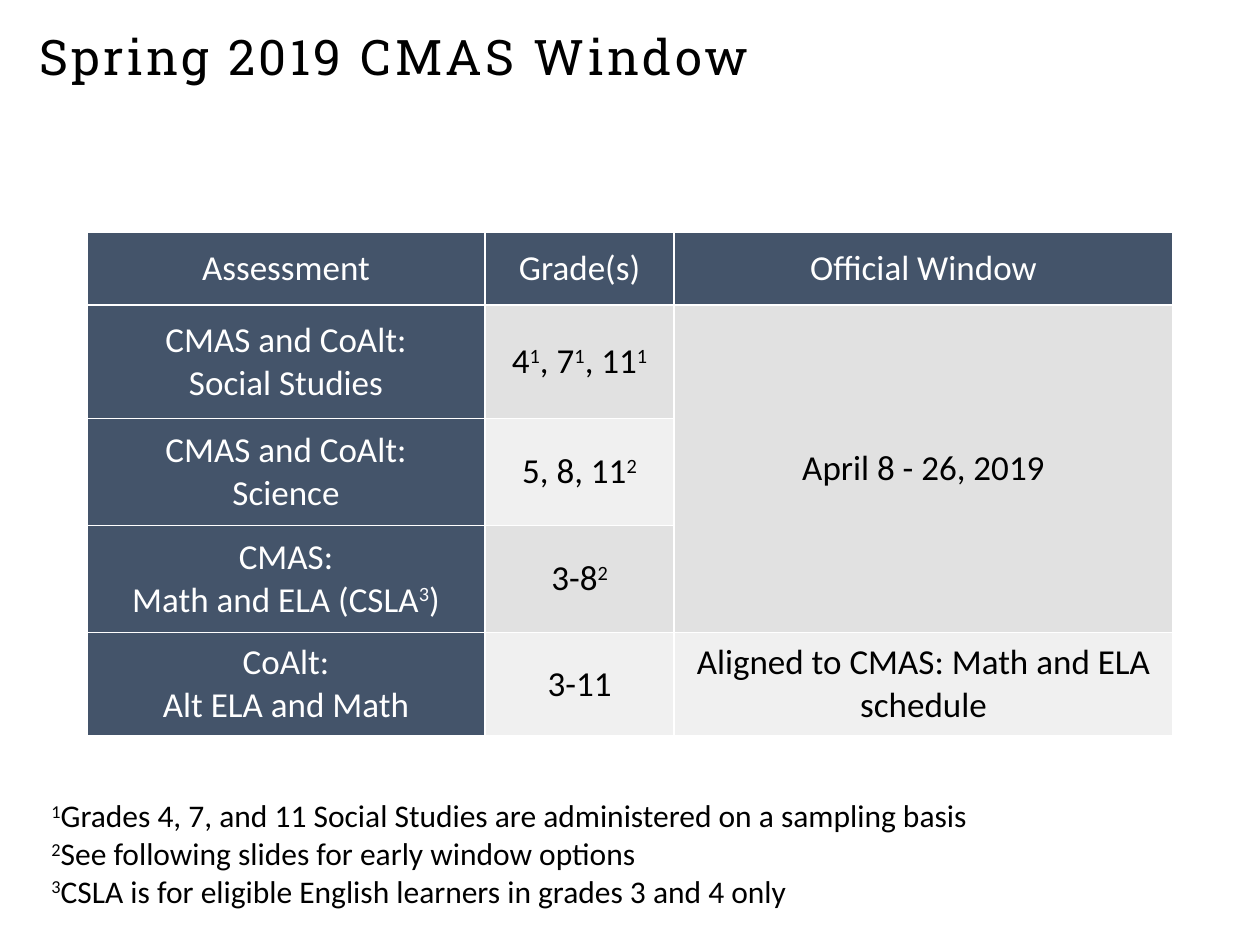
"""Build the Spring 2019 CMAS testing window slide."""
from pptx import Presentation
from pptx.dml.color import RGBColor
from pptx.enum import text
from pptx.util import Inches, Pt

THEME = {
    "navy": "44546A", "bands": ("E1E1E1", "F0F0F0"), "white": "FFFFFF", "black": "000000",
    "body_font": "Calibri", "title_font": "Roboto Slab",
    "title_size": 28, "table_size": 20, "note_size": 18,
}

TITLE = "Spring 2019 CMAS Window"
HEADER = ("Assessment", "Grade(s)", "Official Window")
ASSESSMENTS = [
    ("CMAS and CoAlt:\nSocial Studies", "4^1^, 7^1^, 11^1^", "April 8 - 26, 2019"),
    ("CMAS and CoAlt:\nScience", "5, 8, 11^2^", None),
    ("CMAS:\nMath and ELA (CSLA^3^)", "3-8^2^", None),
    ("CoAlt:\nAlt ELA and Math", "3-11", "Aligned to CMAS: Math and ELA schedule"),
]
FOOTNOTES = (
    "^1^Grades 4, 7, and 11 Social Studies are administered on a sampling basis\n"
    "^2^See following slides for early window options\n"
    "^3^CSLA is for eligible English learners in grades 3 and 4 only"
)
COLUMN_WIDTHS = (3.16, 1.5, 3.96)
ROW_HEIGHTS = (0.58, 0.9, 0.85, 0.85, 0.82)


def write(frame, content, *, size, color=THEME["black"], font=THEME["body_font"],
          align=text.PP_ALIGN.LEFT, spacing=0):
    """Write one paragraph per line; text between carets is superscript."""
    for index, line in enumerate(content.split("\n")):
        paragraph = frame.paragraphs[0] if index == 0 else frame.add_paragraph()
        paragraph.alignment = align
        for part, words in enumerate(line.split("^")):
            if not words:
                continue
            run = paragraph.add_run()
            run.text = words
            run.font.size = Pt(size)
            run.font.name = font
            run.font.bold = False
            run.font.color.rgb = RGBColor.from_string(color)
            if part % 2:
                run.font._element.set("baseline", "30000")
            if spacing:
                run.font._element.set("spc", str(spacing * 100))


def add_title(slide):
    """Place and format the title placeholder."""
    title = slide.shapes.title
    title.left, title.top, title.width, title.height = map(Inches, (0.21, 0.16, 9.59, 0.57))
    title.text_frame.vertical_anchor = text.MSO_ANCHOR.MIDDLE
    write(title.text_frame, TITLE, size=THEME["title_size"], font=THEME["title_font"], spacing=2)


def add_schedule(slide):
    """Add the table of assessments, grades and windows."""
    rows = [HEADER, *ASSESSMENTS]
    schedule = slide.shapes.add_table(
        len(rows), len(HEADER), Inches(0.69), Inches(1.84),
        Inches(sum(COLUMN_WIDTHS)), Inches(sum(ROW_HEIGHTS))).table
    for column, width in zip(schedule.columns, COLUMN_WIDTHS):
        column.width = Inches(width)
    for row, height in zip(schedule.rows, ROW_HEIGHTS):
        row.height = Inches(height)
    schedule.cell(1, 2).merge(schedule.cell(3, 2))
    for r, row in enumerate(rows):
        for c, content in enumerate(row):
            cell = schedule.cell(r, c)
            heading = r == 0 or c == 0
            fill = THEME["navy"] if heading else THEME["bands"][(r - 1) % 2]
            cell.fill.solid()
            cell.fill.fore_color.rgb = RGBColor.from_string(fill)
            cell.vertical_anchor = text.MSO_ANCHOR.MIDDLE
            cell.margin_left = cell.margin_right = cell.margin_top = cell.margin_bottom = 0
            if content:
                write(cell.text_frame, content, size=THEME["table_size"],
                      color=THEME["white" if heading else "black"],
                      align=text.PP_ALIGN.CENTER)


def add_footnotes(slide):
    """Add the numbered notes below the table."""
    notes = slide.shapes.add_textbox(*map(Inches, (0.31, 6.27, 9.59, 1.01))).text_frame
    notes.word_wrap = True
    notes.auto_size = text.MSO_AUTO_SIZE.SHAPE_TO_FIT_TEXT
    write(notes, FOOTNOTES, size=THEME["note_size"])


def main():
    """Assemble and save the presentation."""
    deck = Presentation()
    deck.slide_width, deck.slide_height = Inches(10), Inches(7.5)
    slide = deck.slides.add_slide(deck.slide_layouts[5])
    add_schedule(slide)
    add_footnotes(slide)
    add_title(slide)
    deck.save("out.pptx")


if __name__ == "__main__":
    main()
